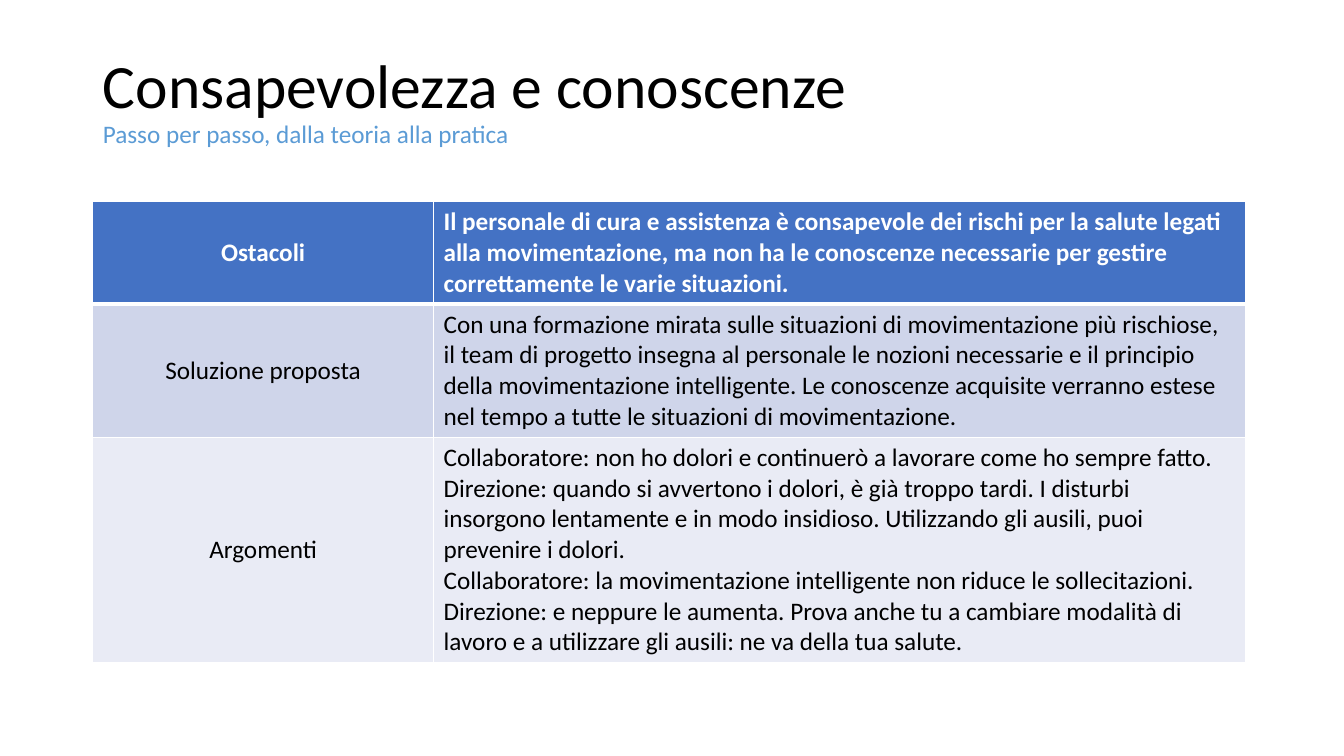
from dataclasses import dataclass

from lxml.etree import SubElement
from pptx import Presentation
from pptx.dml.color import RGBColor as Color
from pptx.enum.text import MSO_ANCHOR as Anchor, MSO_AUTO_SIZE as AutoSize, PP_ALIGN as Align
from pptx.oxml.ns import qn
from pptx.util import Inches, Pt


@dataclass(frozen=True)
class Theme:
    """Colours, font and type sizes of the slide."""
    font: str = "Calibri"
    title_size: int = 44
    text_size: int = 18
    ink: str = "000000"
    paper: str = "FFFFFF"
    accent: str = "5B9BD5"
    header: str = "4472C4"
    bands: tuple = ("CFD5EA", "E9EBF5")
    thin: int = 1
    thick: int = 3


class SlideBuilder:
    """Adds styled elements to the current slide."""

    def __init__(self, slide, theme):
        self.slide = slide
        self.theme = theme

    def add_span(self, para, text, size, color, bold=False):
        """Add one formatted span to a paragraph."""
        span = para.add_run()
        span.text = text
        values = {"name": self.theme.font, "size": Pt(size), "bold": bold}
        for name, value in values.items():
            setattr(span.font, name, value)
        span.font.color.rgb = Color.from_string(color)

    def title(self, heading, subtitle, left, top, width, height):
        """Place the title with its subtitle on a second line."""
        box = self.slide.shapes.title
        place = {"left": left, "top": top, "width": width, "height": height}
        for name, value in place.items():
            setattr(box, name, Inches(value))
        frame = box.text_frame
        layout = {"word_wrap": True, "auto_size": AutoSize.NONE, "vertical_anchor": Anchor.MIDDLE}
        for name, value in layout.items():
            setattr(frame, name, value)
        para = frame.paragraphs[0]
        para.alignment, para.line_spacing = Align.LEFT, 0.9
        self.add_span(para, heading, self.theme.title_size, self.theme.ink)
        para.add_line_break()
        self.add_span(para, subtitle, self.theme.text_size, self.theme.accent)

    def borders(self, cell, top, bottom):
        """Draw the four cell edges, given the top and bottom widths."""
        props = cell._tc.get_or_add_tcPr()
        widths = {"L": self.theme.thin, "R": self.theme.thin, "T": top, "B": bottom}
        for side, width in widths.items():
            line = SubElement(props, qn(f"a:ln{side}"), w=str(Pt(width)))
            fill = SubElement(line, qn("a:solidFill"))
            SubElement(fill, qn("a:srgbClr"), val=self.theme.paper)

    def cell(self, cell, texts, row, align):
        """Fill one cell in the style of its row."""
        theme = self.theme
        is_header = row == 0
        self.borders(cell, theme.thick if row == 1 else theme.thin,
                     theme.thick if is_header else theme.thin)
        cell.fill.solid()
        fill = theme.header if is_header else theme.bands[(row - 1) % 2]
        cell.fill.fore_color.rgb = Color.from_string(fill)
        cell.vertical_anchor = Anchor.MIDDLE
        frame = cell.text_frame
        for index, text in enumerate(texts):
            para = frame.add_paragraph() if index else frame.paragraphs[0]
            para.alignment = align
            self.add_span(para, text, theme.text_size, theme.paper if is_header else theme.ink, is_header)

    def table(self, rows, left, top, widths, heights):
        """Add a table of labels and their paragraphs."""
        area = map(Inches, (left, top, sum(widths), sum(heights)))
        table = self.slide.shapes.add_table(len(rows), len(widths), *area).table
        for column, width in zip(table.columns, widths):
            column.width = Inches(width)
        for line, height in zip(table.rows, heights):
            line.height = Inches(height)
        for row, (label, texts) in enumerate(rows):
            self.cell(table.cell(row, 0), [label], row, Align.CENTER)
            self.cell(table.cell(row, 1), texts, row, Align.LEFT)


ROWS = [
    ("Ostacoli", [
        "Il personale di cura e assistenza è consapevole dei rischi per la salute legati alla "
        "movimentazione, ma non ha le conoscenze necessarie per gestire correttamente le varie situazioni.",
    ]),
    ("Soluzione proposta", [
        "Con una formazione mirata sulle situazioni di movimentazione più rischiose, il team di progetto "
        "insegna al personale le nozioni necessarie e il principio della movimentazione intelligente. "
        "Le conoscenze acquisite verranno estese nel tempo a tutte le situazioni di movimentazione.",
    ]),
    ("Argomenti", [
        "Collaboratore: non ho dolori e continuerò a lavorare come ho sempre fatto.",
        "Direzione: quando si avvertono i dolori, è già troppo tardi. I disturbi insorgono lentamente "
        "e in modo insidioso. Utilizzando gli ausili, puoi prevenire i dolori.",
        "Collaboratore: la movimentazione intelligente non riduce le sollecitazioni.",
        "Direzione: e neppure le aumenta. Prova anche tu a cambiare modalità di lavoro e a utilizzare "
        "gli ausili: ne va della tua salute.",
    ]),
]


def main():
    """Build and save the slide."""
    deck = Presentation()
    deck.slide_width, deck.slide_height = Inches(13.33), Inches(7.5)
    page = SlideBuilder(deck.slides.add_slide(deck.slide_layouts.get_by_name("Title Only")), Theme())
    page.title("Consapevolezza e conoscenze", "Passo per passo, dalla teoria alla pratica",
               0.92, 0.29, 11.5, 1.45)
    page.table(ROWS, 0.92, 2, widths=(3.38, 8.05), heights=(1.01, 1.31, 2.24))
    deck.save("out.pptx")


if __name__ == "__main__":
    main()
